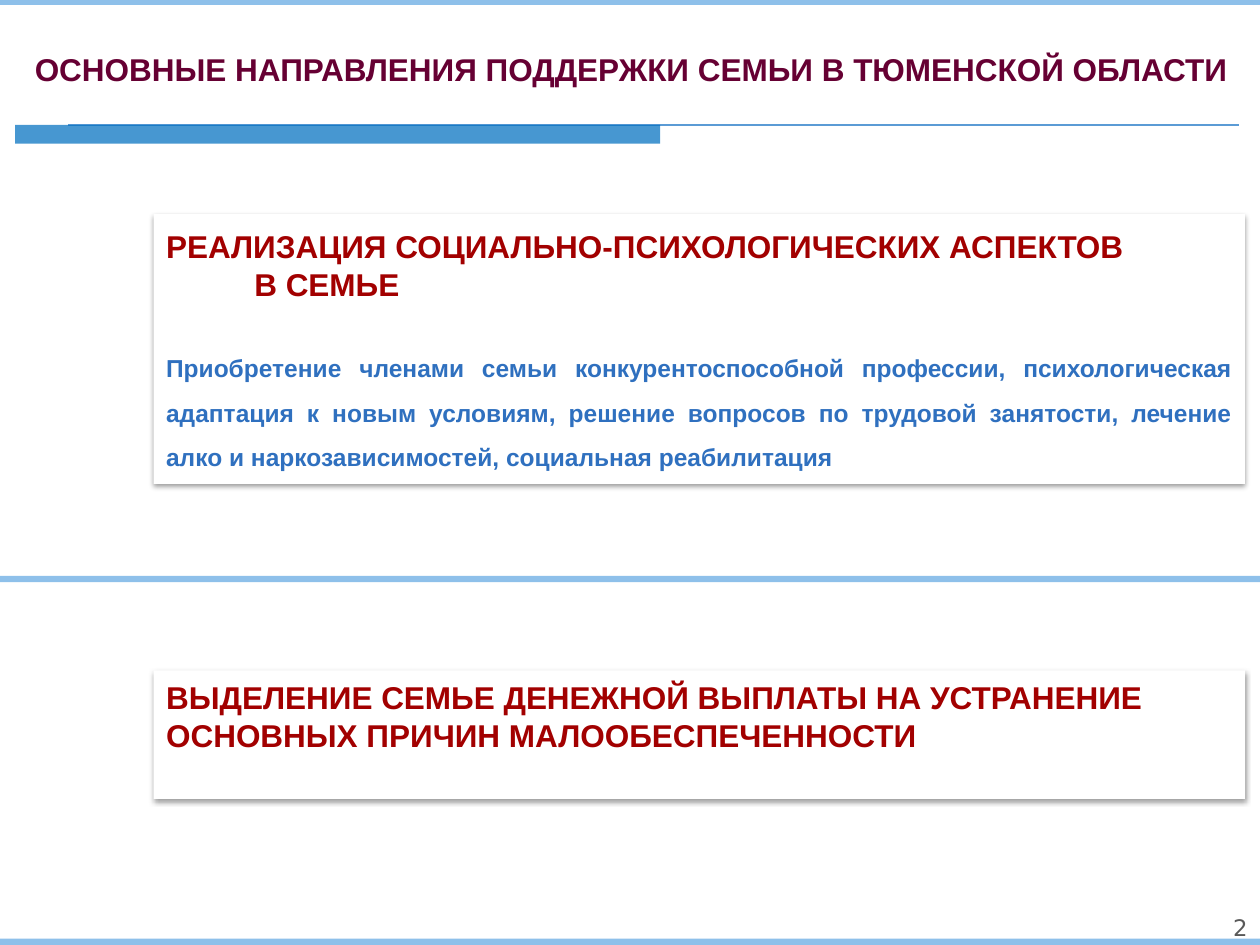
from dataclasses import dataclass

from lxml import etree
from pptx import Presentation
from pptx import util as u
from pptx.dml.color import RGBColor
from pptx.enum import shapes, text
from pptx.oxml import ns


@dataclass(frozen=True)
class Theme:
    font: str = "Arial"
    number_font: str = "DejaVu Sans"
    title: str = "660033"
    heading: str = "A20000"
    body: str = "2F70BF"
    number: str = "595959"
    band: str = "8EC0EA"
    accent: str = "0070C0"
    rule: str = "5B9BD5"
    card: str = "FFFFFF"
    shadow: str = "000000"
    heading_size: int = 18
    body_size: int = 14
    number_size: int = 13


THEME = Theme()
ALIGN = text.PP_ALIGN
ANCHOR = text.MSO_ANCHOR


def inches(box):
    return [u.Inches(value) for value in box]


def apply(target, values):
    for name, value in values.items():
        setattr(target, name, value)


def add_alpha(color, percent):
    etree.SubElement(color, ns.qn("a:alpha"), val=str(percent * 1000))


def set_frame(frame, anchor=ANCHOR.TOP, bottom=0.05):
    apply(frame, {
        "word_wrap": True, "auto_size": text.MSO_AUTO_SIZE.NONE,
        "vertical_anchor": anchor,
        "margin_left": u.Inches(0.1), "margin_right": u.Inches(0.1),
        "margin_top": u.Inches(0.05), "margin_bottom": u.Inches(bottom),
    })


def write(paragraph, words, color, size, bold=True, font=THEME.font, **layout):
    apply(paragraph, {"space_before": u.Pt(0), **layout})
    run = paragraph.add_run()
    run.text = words
    apply(run.font, {"name": font, "size": u.Pt(size), "bold": bold})
    run.font.color.rgb = RGBColor.from_string(color)


def add_block(slide, box, color):
    block = slide.shapes.add_shape(shapes.MSO_SHAPE.RECTANGLE, *inches(box))
    block.fill.solid()
    block.fill.fore_color.rgb = RGBColor.from_string(color)
    block.line.fill.background()
    block.shadow.inherit = False
    return block


def add_shadow(block):
    effects = block._element.spPr.find(ns.qn("a:effectLst"))
    shadow = etree.SubElement(
        effects, ns.qn("a:outerShdw"), blurRad=str(u.Pt(3.1)),
        dist=str(u.Pt(1.6)), dir="5400000", rotWithShape="0")
    add_alpha(etree.SubElement(shadow, ns.qn("a:srgbClr"), val=THEME.shadow), 38)


def add_header(slide, box, words):
    """Title with a thin rule and a short accent bar below it."""
    left, top, width, height = box
    title = slide.shapes.title
    apply(title, dict(zip(("left", "top", "width", "height"), inches(box))))
    set_frame(title.text_frame)
    write(title.text_frame.paragraphs[0], words, THEME.title,
          THEME.heading_size, alignment=ALIGN.CENTER)

    rule_y = top + 0.64
    rule = slide.shapes.add_connector(
        shapes.MSO_CONNECTOR.STRAIGHT,
        *inches((left + width - 0.18, rule_y, left + 0.53, rule_y)))
    rule.line.color.rgb = RGBColor.from_string(THEME.rule)
    rule.line.width = u.Pt(1)
    etree.SubElement(rule._element.spPr, ns.qn("a:effectLst"))

    accent = add_block(slide, (left + 0.11, rule_y, 5.12, 0.15), THEME.accent)
    add_alpha(accent._element.spPr.find(".//" + ns.qn("a:srgbClr")), 72)


def add_card(slide, box, heading_lines, body=None, bottom=0.05):
    """White shadowed card; each heading line is (words, left indent)."""
    card = add_block(slide, box, THEME.card)
    add_shadow(card)
    frame = card.text_frame
    set_frame(frame, ANCHOR.MIDDLE, bottom)
    for index, (words, indent) in enumerate(heading_lines):
        paragraph = frame.add_paragraph() if index else frame.paragraphs[0]
        write(paragraph, words, THEME.heading, THEME.heading_size,
              alignment=ALIGN.LEFT)
        paragraph._p.get_or_add_pPr().set("marL", str(u.Inches(indent)))
    if body:
        write(frame.add_paragraph(), body, THEME.body, THEME.body_size,
              alignment=ALIGN.JUSTIFY, line_spacing=1.5,
              space_before=u.Pt(20.7))


def add_page_number(slide, box, number):
    frame = slide.shapes.add_textbox(*inches(box)).text_frame
    set_frame(frame)
    write(frame.paragraphs[0], number, THEME.number, THEME.number_size,
          bold=False, font=THEME.number_font, alignment=ALIGN.RIGHT)


def main():
    deck = Presentation()
    deck.slide_width, deck.slide_height = u.Inches(10), u.Inches(7.5)
    slide = deck.slides.add_slide(deck.slide_layouts[5])

    # Full-width bands at the edges and between the two cards
    for top, height in ((7.45, 0.07), (-0.03, 0.07), (4.57, 0.05)):
        add_block(slide, (0, top, 10, height), THEME.band)

    add_header(slide, (0.01, 0.35, 10, 0.96),
               "ОСНОВНЫЕ НАПРАВЛЕНИЯ ПОДДЕРЖКИ СЕМЬИ В ТЮМЕНСКОЙ ОБЛАСТИ")

    # Directions of support
    add_card(slide, (1.22, 1.7, 8.66, 2.14),
             [("РЕАЛИЗАЦИЯ СОЦИАЛЬНО-ПСИХОЛОГИЧЕСКИХ АСПЕКТОВ", 0),
              ("В СЕМЬЕ", 0.7)],
             "Приобретение членами семьи конкурентоспособной профессии, "
             "психологическая адаптация к новым условиям, решение вопросов "
             "по трудовой занятости, лечение алко и наркозависимостей, "
             "социальная реабилитация")
    add_card(slide, (1.22, 5.32, 8.66, 1.02),
             [("ВЫДЕЛЕНИЕ СЕМЬЕ ДЕНЕЖНОЙ ВЫПЛАТЫ НА УСТРАНЕНИЕ "
               "ОСНОВНЫХ ПРИЧИН МАЛООБЕСПЕЧЕННОСТИ", 0)], bottom=0.34)

    add_page_number(slide, (9.29, 7.2, 0.71, 0.3), "2")
    deck.save("out.pptx")


if __name__ == "__main__":
    main()
